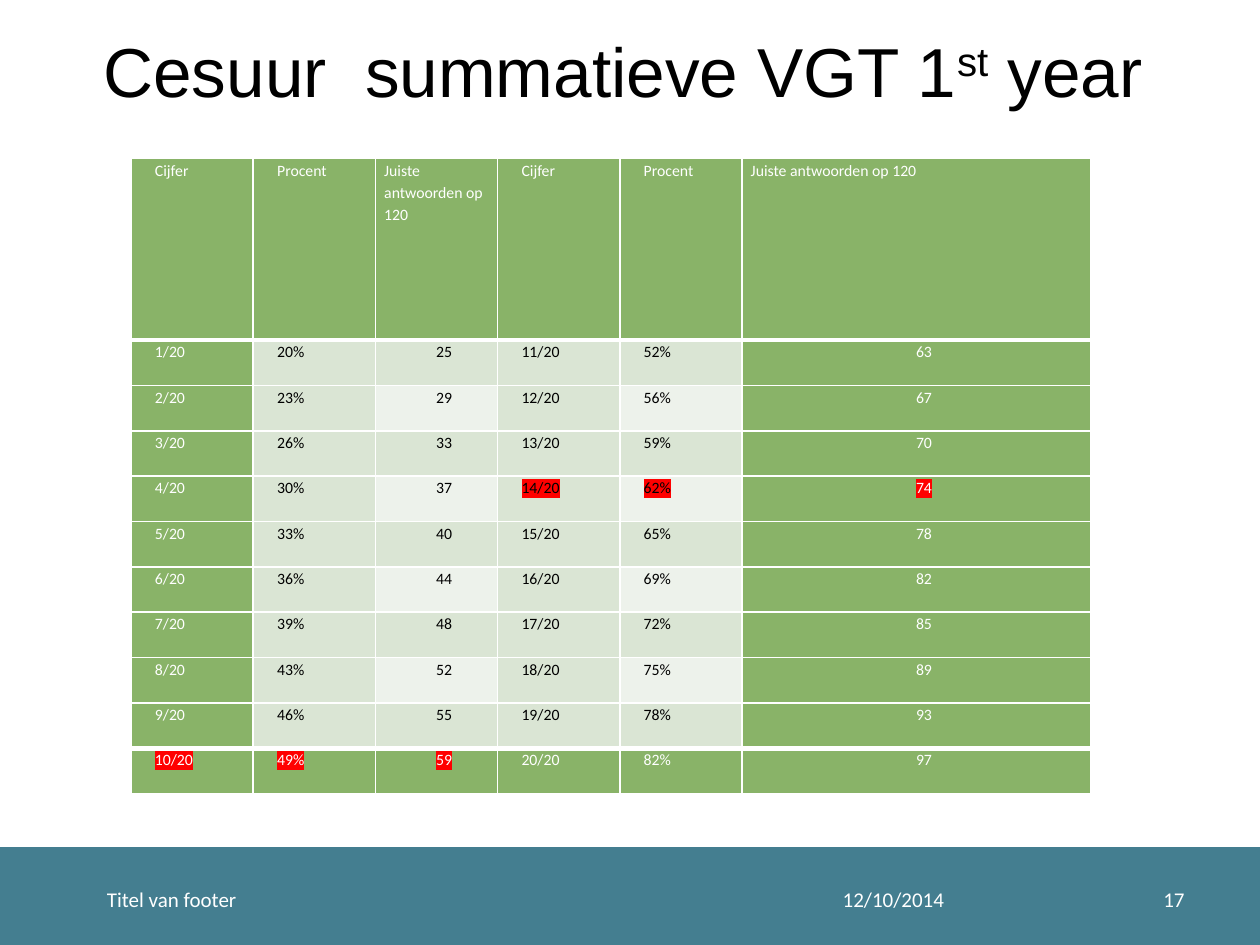
from lxml import etree
from pptx import Presentation
from pptx.dml.color import RGBColor
from pptx.enum.shapes import MSO_SHAPE
from pptx.enum.text import MSO_ANCHOR, PP_ALIGN
from pptx.oxml.ns import qn
from pptx.util import Inches, Pt

LEFT, CENTER, RIGHT = PP_ALIGN.LEFT, PP_ALIGN.CENTER, PP_ALIGN.RIGHT
MIDDLE = MSO_ANCHOR.MIDDLE
RECTANGLE = MSO_SHAPE.RECTANGLE
TITLE_ONLY = 5

COLORS = {
    "footer": "447E90",
    "green": "89B368",
    "band": "DAE5D4",
    "pale": "EDF2EB",
    "highlight": "FF0000",
    "white": "FFFFFF",
    "black": "000000",
}

HEADINGS = ["Cijfer", "Procent", "Juiste antwoorden op 120"] * 2
PERCENTAGES = [20, 23, 26, 30, 33, 36, 39, 43, 46, 49,
               52, 56, 59, 62, 65, 69, 72, 75, 78, 82]
CORRECT_ANSWERS = [25, 29, 33, 37, 40, 44, 48, 52, 55, 59,
                   63, 67, 70, 74, 78, 82, 85, 89, 93, 97]
HIGHLIGHTED_GRADES = (10, 14)
GRADES_PER_HALF = 10
COLUMN_WIDTHS = [0.97] * 5 + [2.77]
ROW_HEIGHTS = [1.44] + [0.36] * GRADES_PER_HALF


def rgb(name):
    return RGBColor.from_string(COLORS[name])


def format_paragraph(para, font, size, color, align=LEFT):
    para.alignment = align
    para.font.name = font
    para.font.size = Pt(size)
    para.font.color.rgb = rgb(color)


def add_solid_color(parent, color):
    fill = etree.SubElement(parent, qn("a:solidFill"))
    etree.SubElement(fill, qn("a:srgbClr"), val=COLORS[color])


def add_title(page):
    title = page.shapes.title
    title.left, title.top = Inches(0.72), Inches(0.44)
    title.width, title.height = Inches(8.78), Inches(0.88)
    title.text_frame.vertical_anchor = MIDDLE
    para = title.text_frame.paragraphs[0]
    format_paragraph(para, "Arial", 39.6, "black")
    for text in ("Cesuur  summatieve VGT 1", "st", " year"):
        span = para.add_run()
        span.text = text
        if text == "st":
            span.font._element.set("baseline", "30000")
    para.add_line_break()


def add_footer_bar(page):
    bar = page.shapes.add_shape(
        RECTANGLE, 0, Inches(6.74), Inches(10.04), Inches(0.79))
    bar.shadow.inherit = False
    bar.fill.solid()
    bar.fill.fore_color.rgb = rgb("footer")
    bar.line.color.rgb = rgb("footer")
    bar.line.width = Pt(2)


def add_footer_text(page, text, left, width, align=LEFT):
    box = page.shapes.add_textbox(
        Inches(left), Inches(6.94), Inches(width), Inches(0.4))
    box.text_frame.word_wrap = True
    box.text_frame.vertical_anchor = MIDDLE
    para = box.text_frame.paragraphs[0]
    para.text = text
    format_paragraph(para, "Calibri", 12, "white", align)


def grade_cells(grade):
    return [f"{grade}/20", f"{PERCENTAGES[grade - 1]}%",
            str(CORRECT_ANSWERS[grade - 1])]


def cell_fill(row, column):
    if row in (0, GRADES_PER_HALF) or column in (0, 5):
        return "green"
    if row % 2 == 0 and column in (2, 4):
        return "pale"
    return "band"


def add_borders(cell, row):
    properties = cell._tc.get_or_add_tcPr()
    widths = {
        "a:lnL": 1,
        "a:lnR": 1,
        "a:lnT": 3 if row == GRADES_PER_HALF else 1,
        "a:lnB": 3 if row == 0 else 1,
    }
    for side, width in widths.items():
        line = etree.SubElement(properties, qn(side), w=str(Pt(width)))
        add_solid_color(line, "white")


def highlight(span):
    mark = etree.SubElement(span.font._element, qn("a:highlight"))
    etree.SubElement(mark, qn("a:srgbClr"), val=COLORS["highlight"])


def fill_cell(cell, text, row, column):
    fill = cell_fill(row, column)
    add_borders(cell, row)
    cell.fill.solid()
    cell.fill.fore_color.rgb = rgb(fill)
    cell.margin_left = cell.margin_right = Inches(0.07)
    cell.margin_top = cell.margin_bottom = 0
    para = cell.text_frame.paragraphs[0]
    is_answers = column % 3 == 2
    format_paragraph(para, "Calibri", 9,
                     "white" if fill == "green" else "black",
                     CENTER if is_answers and row else LEFT)
    para.line_spacing = 1.15
    if row or not is_answers:
        para._p.get_or_add_pPr().set("marL", str(Inches(0.12)))
    span = para.add_run()
    span.text = text
    grade = row + GRADES_PER_HALF * (column // 3)
    if row and grade in HIGHLIGHTED_GRADES:
        highlight(span)


def add_grade_table(page):
    rows = [HEADINGS] + [
        grade_cells(grade) + grade_cells(grade + GRADES_PER_HALF)
        for grade in range(1, GRADES_PER_HALF + 1)]
    table = page.shapes.add_table(
        len(rows), len(HEADINGS), Inches(1.04), Inches(1.26),
        Inches(sum(COLUMN_WIDTHS)), Inches(sum(ROW_HEIGHTS))).table
    table.first_row = False
    table.horz_banding = False
    for column, width in zip(table.columns, COLUMN_WIDTHS):
        column.width = Inches(width)
    for table_row, height in zip(table.rows, ROW_HEIGHTS):
        table_row.height = Inches(height)
    for row, texts in enumerate(rows):
        for column, text in enumerate(texts):
            fill_cell(table.cell(row, column), text, row, column)


def main():
    deck = Presentation()
    deck.slide_width, deck.slide_height = Inches(10), Inches(7.5)
    page = deck.slides.add_slide(deck.slide_layouts[TITLE_ONLY])
    add_footer_bar(page)
    add_title(page)
    add_grade_table(page)
    add_footer_text(page, "12/10/2014", 6.59, 2.33)
    add_footer_text(page, "Titel van footer", 0.75, 5.79)
    add_footer_text(page, "17", 8.92, 0.58, RIGHT)
    deck.save("out.pptx")


if __name__ == "__main__":
    main()
